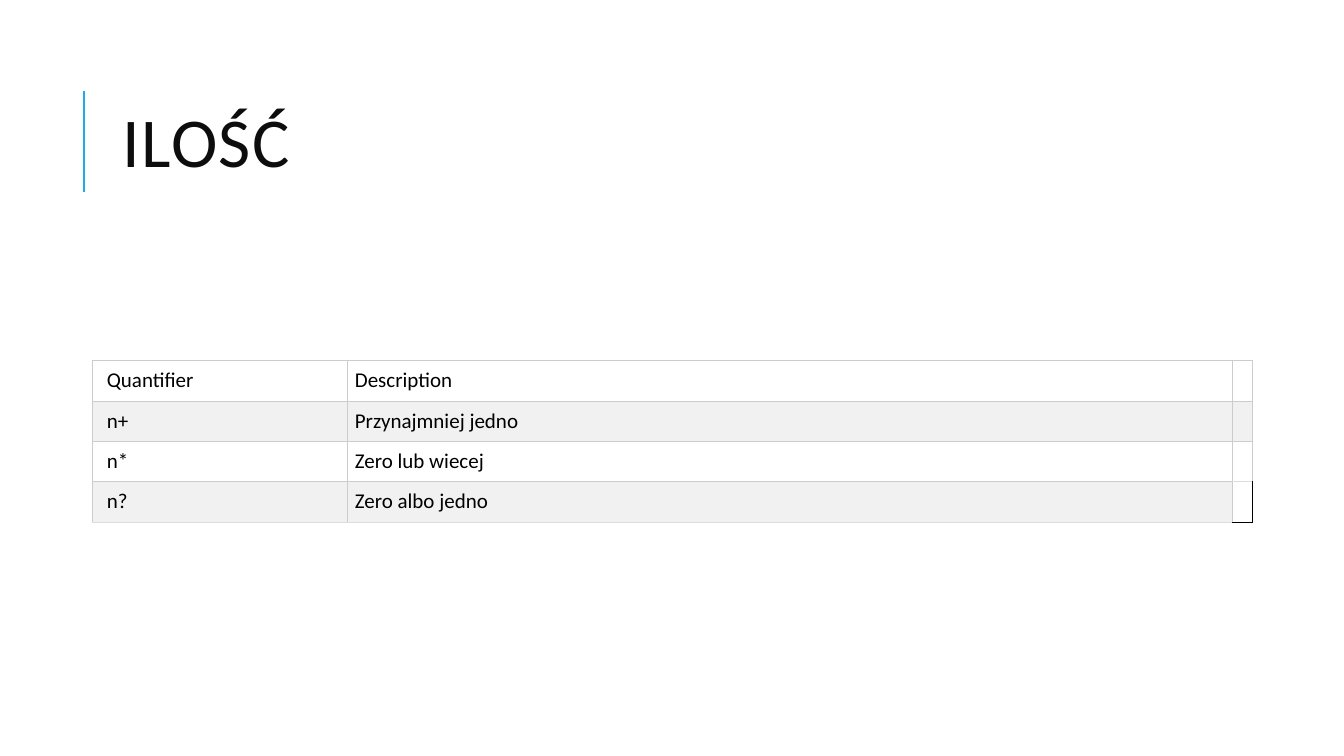
from dataclasses import dataclass

from lxml import etree
from pptx import Presentation
from pptx.dml.color import RGBColor
from pptx.enum.shapes import MSO_CONNECTOR
from pptx.enum.text import MSO_ANCHOR
from pptx.oxml.ns import qn
from pptx.util import Inches, Pt

STRAIGHT = MSO_CONNECTOR.STRAIGHT
MIDDLE = MSO_ANCHOR.MIDDLE
FONT = "Calibri"
COLORS = {
    "accent": "1CADE4",
    "title": "0D0D0D",
    "text": "000000",
    "white": "FFFFFF",
    "band": "F1F1F1",
    "grid": "CCCCCC",
    "light_grid": "DDDDDD",
}
COLUMN_WIDTHS = (2.53, 8.77, 0.2)
ROW_HEIGHT = 0.4
CELL_MARGIN = 0.07
FIRST_MARGIN = 0.14


@dataclass(frozen=True)
class QuantifierRow:
    quantifier: str
    description: str
    fill: str
    bottom: str = "grid"


ROWS = (
    QuantifierRow("Quantifier", "Description", "white"),
    QuantifierRow("n+", "Przynajmniej jedno", "band"),
    QuantifierRow("n*", "Zero lub wiecej", "white"),
    QuantifierRow("n?", "Zero albo jedno", "band", "light_grid"),
)


def rgb(name: str) -> RGBColor:
    return RGBColor.from_string(COLORS[name])


def add_run(paragraph, text: str, size: float, color: str):
    run = paragraph.add_run()
    run.text = text
    run.font.name = FONT
    run.font.size = Pt(size)
    run.font.color.rgb = rgb(color)
    return run


def set_borders(cell, left: str, right: str, top: str, bottom: str) -> None:
    properties = cell._tc.get_or_add_tcPr()
    sides = {"a:lnL": left, "a:lnR": right, "a:lnT": top, "a:lnB": bottom}
    for tag, color in sides.items():
        line = etree.SubElement(properties, qn(tag), w=str(Pt(0.75)))
        fill = etree.SubElement(line, qn("a:solidFill"))
        etree.SubElement(fill, qn("a:srgbClr"), val=COLORS[color])


def add_accent_line(slide) -> None:
    line = slide.shapes.add_connector(
        STRAIGHT, Inches(0.83), Inches(1.9), Inches(0.83), Inches(0.9))
    line.line.color.rgb = rgb("accent")
    line.line.width = Pt(1.5)
    etree.SubElement(line._element.spPr, qn("a:effectLst"))


def add_title(slide, text: str) -> None:
    box = slide.shapes.add_textbox(
        Inches(1.12), Inches(0.64), Inches(10.63), Inches(1.64))
    frame = box.text_frame
    frame.word_wrap = True
    frame.vertical_anchor = MIDDLE
    paragraph = frame.paragraphs[0]
    paragraph.line_spacing = 0.8
    run = add_run(paragraph, text, 50, "title")
    run.font._element.set("spc", "100")


def add_quantifier_table(slide) -> None:
    shape = slide.shapes.add_table(
        len(ROWS), len(COLUMN_WIDTHS), Inches(0.92), Inches(3.58),
        Inches(sum(COLUMN_WIDTHS)), Inches(ROW_HEIGHT * len(ROWS)))
    table = shape.table
    table.first_row = False
    table.horz_banding = False
    for column, width in zip(table.columns, COLUMN_WIDTHS):
        column.width = Inches(width)

    for row_index, row in enumerate(ROWS):
        table.rows[row_index].height = Inches(ROW_HEIGHT)
        top = ROWS[row_index - 1].bottom if row_index else "grid"
        for column_index, text in enumerate((row.quantifier, row.description, "")):
            cell = table.cell(row_index, column_index)
            # The corner cell is unfilled, with black outer edges
            corner = row is ROWS[-1] and not text
            if corner:
                set_borders(cell, "grid", "text", "light_grid", "text")
                cell.fill.background()
            else:
                set_borders(cell, "grid", "grid", top, row.bottom)
                cell.fill.solid()
                cell.fill.fore_color.rgb = rgb(row.fill)
            margin = Inches(CELL_MARGIN if text else 0)
            cell.margin_right = cell.margin_top = cell.margin_bottom = margin
            cell.margin_left = margin if column_index else Inches(FIRST_MARGIN)
            if text:
                add_run(cell.text_frame.paragraphs[0], text, 15, "text")


def main() -> None:
    presentation = Presentation()
    presentation.slide_width = Inches(13.33)
    presentation.slide_height = Inches(7.5)
    slide = presentation.slides.add_slide(presentation.slide_layouts[6])

    # Heading
    add_accent_line(slide)
    add_title(slide, "ILOŚĆ")

    # Quantifiers
    add_quantifier_table(slide)
    presentation.save("out.pptx")


if __name__ == "__main__":
    main()
